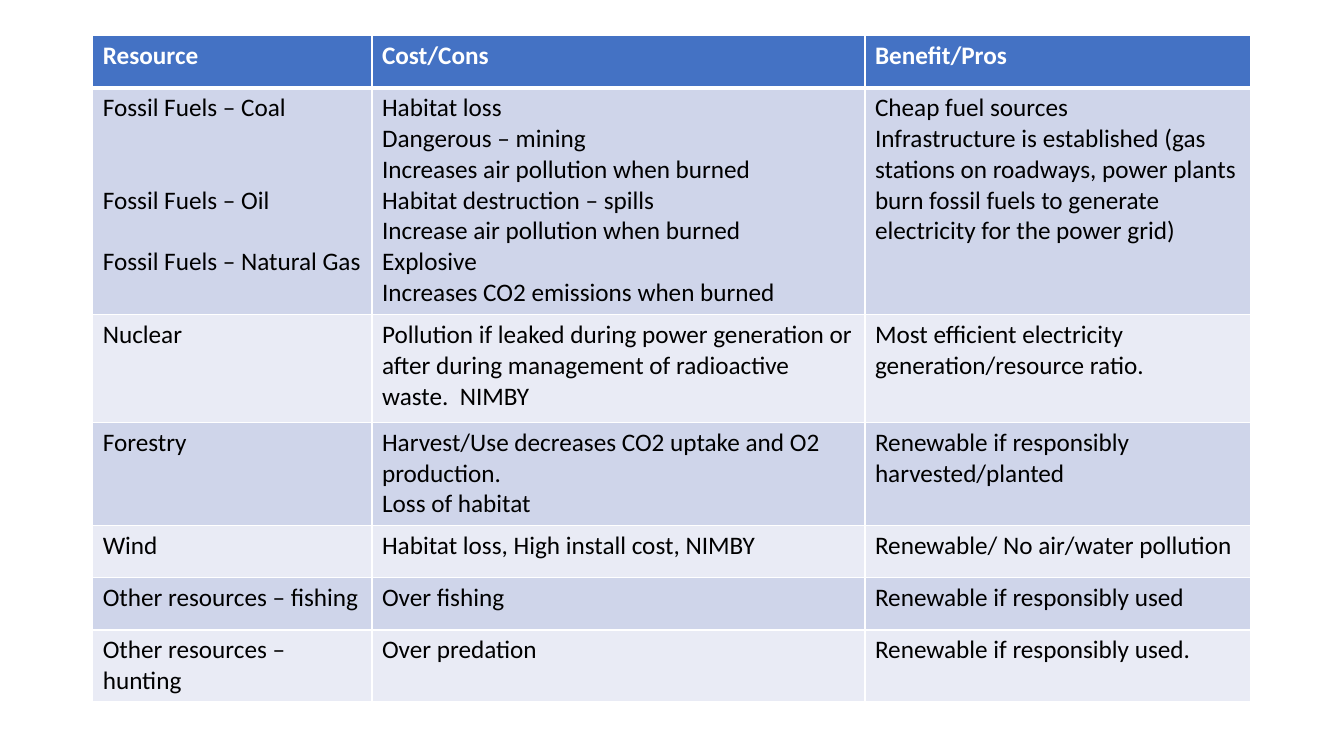
from lxml.etree import SubElement
from pptx import Presentation
from pptx.dml.color import RGBColor
from pptx.oxml.ns import qn
from pptx.util import Inches, Pt

COLORS = {
    "header": "4472C4",
    "odd_row": "CFD5EA",
    "even_row": "E9EBF5",
    "border": "FFFFFF",
    "header_text": "FFFFFF",
    "body_text": "000000",
}
FONT, FONT_SIZE = "Calibri", 18
LINE_HEIGHT = 1.22 * FONT_SIZE  # points

# Percentages of the slide's width and height
LEFT, TOP = 6.9, 4.67
COLUMN_WIDTHS = [20.78, 36.68, 28.73]
LOW_ROW = 6.93
ROW_HEIGHTS = [LOW_ROW, 30, 14.27, 13.6, LOW_ROW, LOW_ROW, 9.47]

# Each cell lists its paragraphs; a pair adds the number of lines left free above
RESOURCES = [
    [["Resource"], ["Cost/Cons"], ["Benefit/Pros"]],
    [
        ["Fossil Fuels – Coal", ("Fossil Fuels – Oil", 2), ("Fossil Fuels – Natural Gas", 1)],
        [
            "Habitat loss",
            "Dangerous – mining",
            "Increases air pollution when burned",
            "Habitat destruction – spills",
            "Increase air pollution when burned",
            "Explosive",
            "Increases CO2 emissions when burned",
        ],
        [
            "Cheap fuel sources",
            "Infrastructure is established (gas stations on roadways, power plants "
            "burn fossil fuels to generate electricity for the power grid)",
        ],
    ],
    [
        ["Nuclear"],
        ["Pollution if leaked during power generation or after during management "
         "of radioactive waste.  NIMBY"],
        ["Most efficient electricity generation/resource ratio."],
    ],
    [
        ["Forestry"],
        ["Harvest/Use decreases CO2 uptake and O2 production.", "Loss of habitat"],
        ["Renewable if responsibly harvested/planted"],
    ],
    [["Wind"], ["Habitat loss, High install cost, NIMBY"], ["Renewable/ No air/water pollution"]],
    [["Other resources – fishing"], ["Over fishing"], ["Renewable if responsibly used"]],
    [["Other resources – hunting"], ["Over predation"], ["Renewable if responsibly used."]],
]


def share(percent, total):
    return round(percent * total / 100)


def write_cell(cell, entries, is_header):
    frame = cell.text_frame
    for index, entry in enumerate(entries):
        wording, free_lines = entry if isinstance(entry, tuple) else (entry, 0)
        paragraph = frame.add_paragraph() if index else frame.paragraphs[0]
        if free_lines:
            paragraph.space_before = Pt(round(free_lines * LINE_HEIGHT))
        run = paragraph.add_run()
        run.text = wording
        run.font.name = FONT
        run.font.size = Pt(FONT_SIZE)
        run.font.bold = is_header
        text_color = COLORS["header_text" if is_header else "body_text"]
        run.font.color.rgb = RGBColor.from_string(text_color)


def draw_borders(cell, top, bottom):
    properties = cell._tc.get_or_add_tcPr()
    for side, points in (("L", 1), ("R", 1), ("T", top), ("B", bottom)):
        border = SubElement(properties, qn(f"a:ln{side}"), w=str(Pt(points)))
        fill = SubElement(border, qn("a:solidFill"))
        SubElement(fill, qn("a:srgbClr"), val=COLORS["border"])


def fill_cell(cell, row):
    band = "header" if row == 0 else "odd_row" if row % 2 else "even_row"
    cell.fill.solid()
    cell.fill.fore_color.rgb = RGBColor.from_string(COLORS[band])


def add_resource_table(slide, slide_width, slide_height):
    widths = [share(width, slide_width) for width in COLUMN_WIDTHS]
    heights = [share(height, slide_height) for height in ROW_HEIGHTS]
    table = slide.shapes.add_table(
        len(heights), len(widths),
        share(LEFT, slide_width), share(TOP, slide_height),
        sum(widths), sum(heights),
    ).table
    for column, width in zip(table.columns, widths):
        column.width = width
    for row, (entries_by_column, height) in enumerate(zip(RESOURCES, heights)):
        table.rows[row].height = height
        for column, entries in enumerate(entries_by_column):
            cell = table.cell(row, column)
            write_cell(cell, entries, row == 0)
            # A thick rule separates the header from the body
            draw_borders(cell, top=3 if row == 1 else 1, bottom=3 if row == 0 else 1)
            fill_cell(cell, row)


def main():
    deck = Presentation()
    deck.slide_width, deck.slide_height = Inches(13.33), Inches(7.5)
    slide = deck.slides.add_slide(deck.slide_layouts[6])
    add_resource_table(slide, deck.slide_width, deck.slide_height)
    deck.save("out.pptx")


if __name__ == "__main__":
    main()
